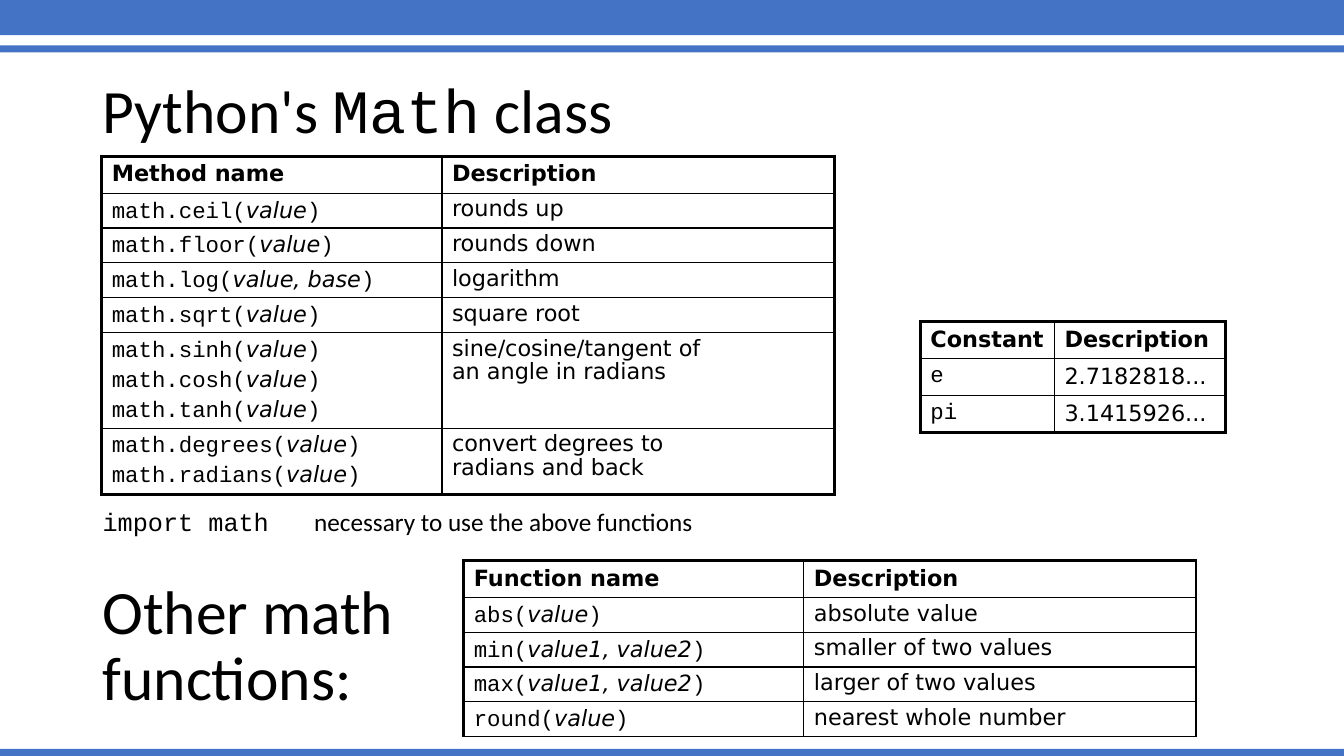
"""Build a slide of tables about the functions and constants of Python's math class."""
from dataclasses import dataclass

from lxml import etree
from pptx import Presentation
from pptx.dml.color import RGBColor
from pptx.enum.shapes import MSO_SHAPE
from pptx.enum.text import MSO_ANCHOR, MSO_AUTO_SIZE, PP_ALIGN
from pptx.oxml.ns import qn
from pptx.util import Pt

RECT = MSO_SHAPE.RECTANGLE
MIDDLE = MSO_ANCHOR.MIDDLE
FIXED = MSO_AUTO_SIZE.NONE
LEFT = PP_ALIGN.LEFT

HEX = {"bar": "4472C4", "ink": "000000", "paper": "FFFFFF"}
SANS, CODE, BODY = "DejaVu Sans", "Courier New", "Calibri"
WIDE, TALL = 960, 540
EDGE, INNER = 2.25, 1
HEAD = 26.5
MARGIN = 66.2
TAB = 151.2


@dataclass
class Bar:
    """A coloured band across the slide."""
    top: float
    height: float


@dataclass
class Grid:
    """A two-column table, with a header row first."""
    left: float
    top: float
    cols: tuple[float, float]
    row: float
    pitch: float
    base: float
    rows: list[tuple[str, str]]


BARS = [Bar(0, 25.2), Bar(32.4, 5), Bar(535, 5)]
METHODS = [
    ("Method name", "Description"),
    ("math.ceil(value)", "rounds up"),
    ("math.floor(value)", "rounds down"),
    ("math.log(value, base)", "logarithm"),
    ("math.sqrt(value)", "square root"),
    ("math.sinh(value)\nmath.cosh(value)\nmath.tanh(value)",
     "sine/cosine/tangent of\nan angle in radians"),
    ("math.degrees(value)\nmath.radians(value)",
     "convert degrees to\nradians and back"),
]
VALUES = [("Constant", "Description"), ("e", "2.7182818..."), ("pi", "3.1415926...")]
OTHERS = [
    ("Function name", "Description"),
    ("abs(value)", "absolute value"),
    ("min(value1, value2)", "smaller of two values"),
    ("max(value1, value2)", "larger of two values"),
    ("round(value)", "nearest whole number"),
]
GRIDS = [
    Grid(72.7, 111.6, (243, 280.2), 24.5, 0.9, EDGE, METHODS),
    Grid(657.4, 229.7, (95.8, 122.4), HEAD, 1, EDGE, VALUES),
    Grid(331.2, 400.3, (243, 280.2), 24.5, 0.9, INNER, OTHERS),
]


def style(para, size: float, name: str | None = None, bold: bool = False) -> None:
    """Set the font that all runs of a paragraph share."""
    font = para.font
    font.size, font.bold = Pt(size), bold
    font.color.rgb = RGBColor.from_string(HEX["ink"])
    if name:
        font.name = name


def add_run(para, text: str, name: str, slant: bool = False) -> None:
    """Append a run in the named font."""
    run = para.add_run()
    run.text = text
    run.font.name = name
    if slant:
        run.font.italic = True


def add_bar(slide, bar: Bar) -> None:
    """Draw a band across the slide."""
    shape = slide.shapes.add_shape(RECT, 0, Pt(bar.top), Pt(WIDE), Pt(bar.height))
    shape.shadow.inherit = False
    shape.fill.solid()
    shape.fill.fore_color.rgb = RGBColor.from_string(HEX["bar"])
    shape.line.fill.background()


def add_lines(cell, widths: dict[str, float]) -> None:
    """Give a cell its four borders."""
    props = cell._tc.get_or_add_tcPr()
    for spot, (side, width) in enumerate(widths.items()):
        line = etree.Element(qn(f"a:ln{side}"), w=str(int(Pt(width))))
        fill = etree.SubElement(line, qn("a:solidFill"))
        etree.SubElement(fill, qn("a:srgbClr"), val=HEX["ink"])
        props.insert(spot, line)


def fill_code(frame, text: str, pitch: float) -> None:
    """Write one call or constant to a paragraph, with its arguments in italics."""
    for count, call in enumerate(text.split("\n")):
        para = frame.add_paragraph() if count else frame.paragraphs[0]
        style(para, 16)
        para.line_spacing = pitch
        para.space_before = Pt(3.84 if count else 0)
        name, paren, args = call.partition("(")
        add_run(para, name + paren, CODE)
        if paren:
            add_run(para, args.rstrip(")"), SANS, True)
            add_run(para, ")", CODE)


def fill_plain(frame, text: str, pitch: float, bold: bool) -> None:
    """Write a header or a description."""
    para = frame.paragraphs[0]
    para.text = text
    style(para, 16, SANS, bold)
    para.line_spacing = pitch


def add_grid(slide, grid: Grid) -> None:
    """Draw a table with a heavy frame and thin inner rules."""
    sizes = {1: grid.row, 2: 47.5, 3: 68.4}
    highs = [HEAD] + [sizes[code.count("\n") + 1] for code, _ in grid.rows[1:]]
    last = len(grid.rows) - 1
    table = slide.shapes.add_table(
        len(grid.rows), 2, Pt(grid.left), Pt(grid.top), Pt(sum(grid.cols)), Pt(sum(highs))
    ).table
    table.first_row = table.horz_banding = False
    for col, width in zip(table.columns, grid.cols):
        col.width = Pt(width)
    for r, (texts, high) in enumerate(zip(grid.rows, highs)):
        table.rows[r].height = Pt(high)
        for c, text in enumerate(texts):
            cell = table.cell(r, c)
            cell.fill.solid()
            cell.fill.fore_color.rgb = RGBColor.from_string(HEX["paper"])
            add_lines(cell, {
                "L": INNER if c else EDGE,
                "R": EDGE if c else INNER,
                "T": INNER if r else EDGE,
                "B": grid.base if r == last else INNER,
            })
            if r and not c:
                fill_code(cell.text_frame, text, grid.pitch)
            else:
                fill_plain(cell.text_frame, text, grid.pitch if r else 1, not r)


def place_title(slide) -> None:
    """Move and format the title."""
    title = slide.shapes.title
    title.left, title.top, title.width, title.height = Pt(MARGIN), Pt(28.8), Pt(828), Pt(104.4)
    frame = title.text_frame
    frame.auto_size, frame.vertical_anchor = FIXED, MIDDLE
    para = frame.paragraphs[0]
    para.alignment, para.line_spacing = LEFT, 0.9
    style(para, 44)
    for text, name in (("Python's ", BODY), ("Math", CODE), (" class", BODY)):
        add_run(para, text, name)


def add_box(slide, top: float, width: float, height: float):
    """Add a wrapping text box at the left margin and return its frame."""
    frame = slide.shapes.add_textbox(Pt(MARGIN), Pt(top), Pt(width), Pt(height)).text_frame
    frame.word_wrap = True
    return frame


def main() -> None:
    """Build and save the slide."""
    deck = Presentation()
    deck.slide_width, deck.slide_height = Pt(WIDE), Pt(TALL)
    slide = deck.slides.add_slide(deck.slide_layouts[5])
    for bar in BARS:
        add_bar(slide, bar)
    place_title(slide)
    for grid in GRIDS:
        add_grid(slide, grid)
    other = add_box(slide, 410.4, 388, 104.4)
    other.vertical_anchor = MIDDLE
    other.text = "Other math functions:"
    style(other.paragraphs[0], 44, BODY)
    other.paragraphs[0].line_spacing = 0.9
    note = add_box(slide, 357.8, 440, 29).paragraphs[0]
    style(note, 18)
    add_run(note, "import math\t", CODE)
    add_run(note, "necessary to use the above functions", BODY)
    tabs = etree.Element(qn("a:tabLst"))
    etree.SubElement(tabs, qn("a:tab"), pos=str(int(Pt(TAB))), algn="l")
    note._p.get_or_add_pPr().insert(0, tabs)
    deck.save("out.pptx")


if __name__ == "__main__":
    main()
